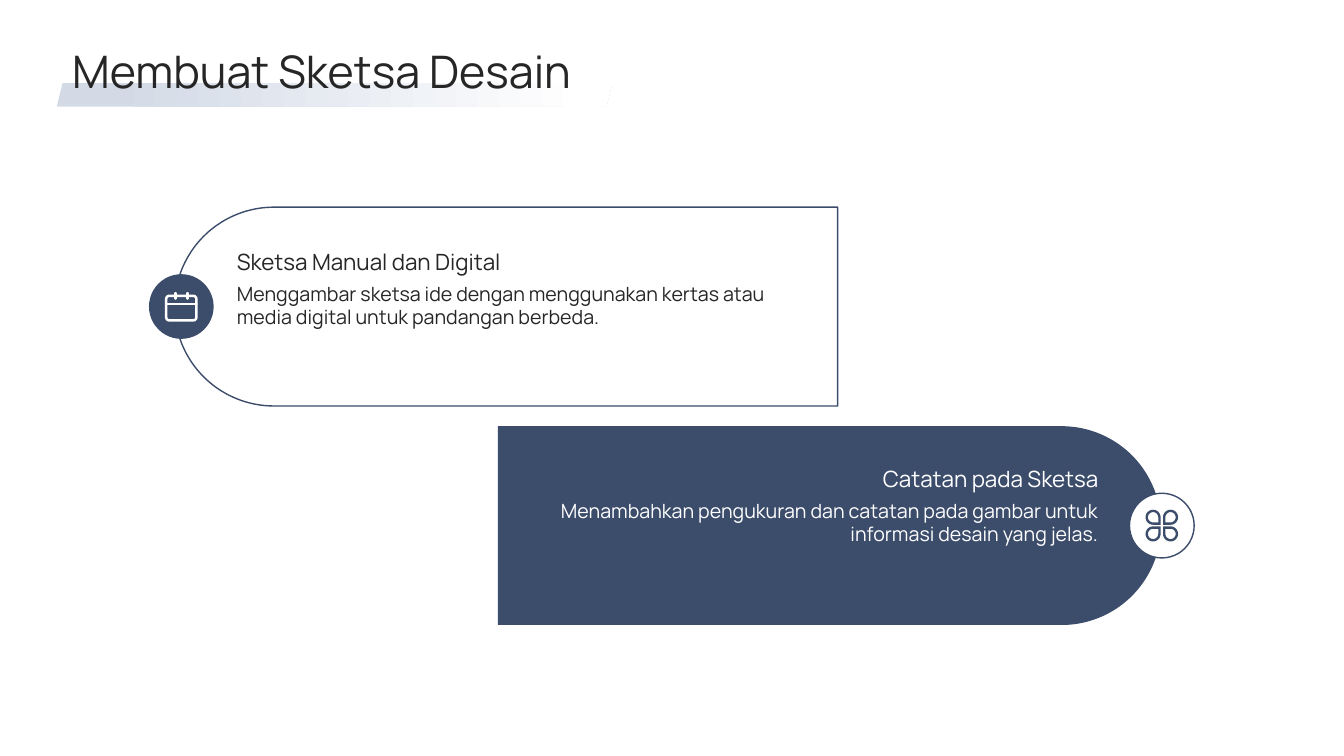
import math

from lxml import etree
from pptx import Presentation
from pptx import util as u
from pptx.dml import color
from pptx.enum import shapes, text
from pptx.oxml import ns

NAVY, INK, WHITE, MIST = "3C4C6B", "262626", "FFFFFF", "D3DAE6"
SHAPE = shapes.MSO_SHAPE
LEFT, RIGHT = text.PP_ALIGN.LEFT, text.PP_ALIGN.RIGHT
TOP, MIDDLE, BOTTOM = (text.MSO_ANCHOR.TOP, text.MSO_ANCHOR.MIDDLE,
                       text.MSO_ANCHOR.BOTTOM)
PANEL_WIDTH, PANEL_HEIGHT = 16.71, 5.01
BADGE_SIZE = 1.63
ICON_STROKE = 1.8


def rgb(value):
    return color.RGBColor.from_string(value)


def petal_outline(x, y, radius, side_x, side_y):
    """A circle whose quarter facing the clover's centre is a square corner."""
    angles = [math.radians(degrees) for degrees in range(90, 361, 15)]
    points = [(math.cos(angle), math.sin(angle)) for angle in angles] + [(1, 1)]
    return [(u.Cm(x - side_x * radius * dx), u.Cm(y - side_y * radius * dy))
            for dx, dy in points]


class SlideBuilder:
    """Draws styled elements on one slide; lengths are in centimetres."""

    def __init__(self, slide, font):
        self.slide = slide
        self.font = font

    def paint(self, shape, fill=None, line=None, weight=1):
        shape.shadow.inherit = False
        if fill:
            shape.fill.solid()
            shape.fill.fore_color.rgb = rgb(fill)
        else:
            shape.fill.background()
        if line:
            shape.line.color.rgb = rgb(line)
            shape.line.width = u.Pt(weight)
        else:
            shape.line.fill.background()

    def shape(self, kind, left, top, width, height, rotation=0, **style):
        shape = self.slide.shapes.add_shape(
            kind, u.Cm(left), u.Cm(top), u.Cm(width), u.Cm(height))
        shape.rotation = rotation
        self.paint(shape, **style)
        return shape

    def centred(self, kind, x, y, width, height, **style):
        return self.shape(kind, x - width / 2, y - height / 2, width, height, **style)

    def line(self, x1, y1, x2, y2, stroke):
        connector = self.slide.shapes.add_connector(
            shapes.MSO_CONNECTOR.STRAIGHT, u.Cm(x1), u.Cm(y1), u.Cm(x2), u.Cm(y2))
        connector.line.color.rgb = rgb(stroke)
        connector.line.width = u.Pt(ICON_STROKE)
        connector.line._get_or_add_ln().set("cap", "rnd")
        etree.SubElement(connector._element.spPr, ns.qn("a:effectLst"))

    def label(self, words, left, top, width, height, size, ink,
              align=LEFT, anchor=TOP):
        box = self.slide.shapes.add_textbox(
            u.Cm(left), u.Cm(top), u.Cm(width), u.Cm(height))
        frame = box.text_frame
        frame.text = words
        frame.word_wrap = True
        frame.vertical_anchor = anchor
        frame.margin_left = frame.margin_right = 0
        frame.margin_top = frame.margin_bottom = 0
        paragraph = frame.paragraphs[0]
        paragraph.alignment = align
        font = paragraph.runs[0].font
        font.name, font.size = self.font, u.Pt(size)
        font.color.rgb = rgb(ink)

    def title(self, words):
        stroke = self.shape(SHAPE.PARALLELOGRAM, 1.43, 2.08, 14, 0.61)
        stroke.fill.gradient()
        stroke.fill.gradient_angle = 0
        for stop, position, tone in zip(stroke.fill.gradient_stops,
                                        (0.1, 0.95), (MIST, WHITE)):
            stop.position = position
            stop.color.rgb = rgb(tone)
        self.label(words, 1.82, 1.19, 30.18, 1.19, 32, INK, anchor=MIDDLE)

    def panel(self, left, top, rotation, fill, line=None):
        # The rounded end is the shape's top, so the panel is a turned upright one
        panel = self.centred(
            SHAPE.ROUND_2_SAME_RECTANGLE, left + PANEL_WIDTH / 2,
            top + PANEL_HEIGHT / 2, PANEL_HEIGHT, PANEL_WIDTH,
            fill=fill, line=line, rotation=rotation)
        panel.adjustments[0] = 0.5
        panel.adjustments[1] = 0

    def panel_text(self, heading, body, left, top, width, ink, align):
        self.label(heading, left, top, width, 1.22, 16, ink, align, BOTTOM)
        self.label(body, left, top + 1.4, width, 3.1, 14, ink, align)

    def badge(self, x, y, fill, line=None):
        self.centred(SHAPE.OVAL, x, y, BADGE_SIZE, BADGE_SIZE, fill=fill, line=line)

    def calendar_icon(self, x, y, stroke):
        page = self.centred(SHAPE.ROUNDED_RECTANGLE, x, y + 0.04, 0.76, 0.62,
                            line=stroke, weight=ICON_STROKE)
        page.adjustments[0] = 0.12
        self.line(x - 0.38, y - 0.06, x + 0.38, y - 0.06, stroke)
        for pin in (x - 0.15, x + 0.15):
            self.line(pin, y - 0.34, pin, y - 0.2, stroke)

    def clover_icon(self, x, y, fill):
        # Each petal is an outer outline with a smaller one as its hole
        outlines = [petal_outline(x + side_x * 0.22, y + side_y * 0.21,
                                  radius, side_x, side_y)
                    for side_x in (-1, 1) for side_y in (-1, 1)
                    for radius in (0.19, 0.13)]
        builder = self.slide.shapes.build_freeform(*outlines[0][0])
        for outline in outlines:
            builder.move_to(*outline[0])
            builder.add_line_segments(outline[1:], close=True)
        self.paint(builder.convert_to_shape(), fill=fill)


def main():
    presentation = Presentation()
    presentation.slide_width = u.Cm(33.87)
    presentation.slide_height = u.Cm(19.05)
    slide = presentation.slides.add_slide(presentation.slide_layouts[6])
    builder = SlideBuilder(slide, "Manrope")

    builder.title("Membuat Sketsa Desain")

    # Sketching panel, rounded on the left
    sketch_top = 5.22
    sketch_middle = sketch_top + PANEL_HEIGHT / 2
    builder.panel(4.4, sketch_top, 270, WHITE, NAVY)
    builder.panel_text(
        "Sketsa Manual dan Digital",
        "Menggambar sketsa ide dengan menggunakan kertas atau media digital "
        "untuk pandangan berbeda.",
        5.97, 5.7, 14.68, INK, LEFT)
    builder.badge(4.57, sketch_middle, NAVY)
    builder.calendar_icon(4.57, sketch_middle, WHITE)

    # Notes panel, rounded on the right
    notes_top = 10.74
    notes_middle = notes_top + PANEL_HEIGHT / 2
    builder.panel(12.55, notes_top, 90, NAVY)
    builder.panel_text(
        "Catatan pada Sketsa",
        "Menambahkan pengukuran dan catatan pada gambar untuk informasi "
        "desain yang jelas.",
        13.28, 11.17, 14.4, WHITE, RIGHT)
    builder.badge(29.28, notes_middle, WHITE, NAVY)
    builder.clover_icon(29.28, notes_middle, NAVY)

    presentation.save("out.pptx")


if __name__ == "__main__":
    main()
